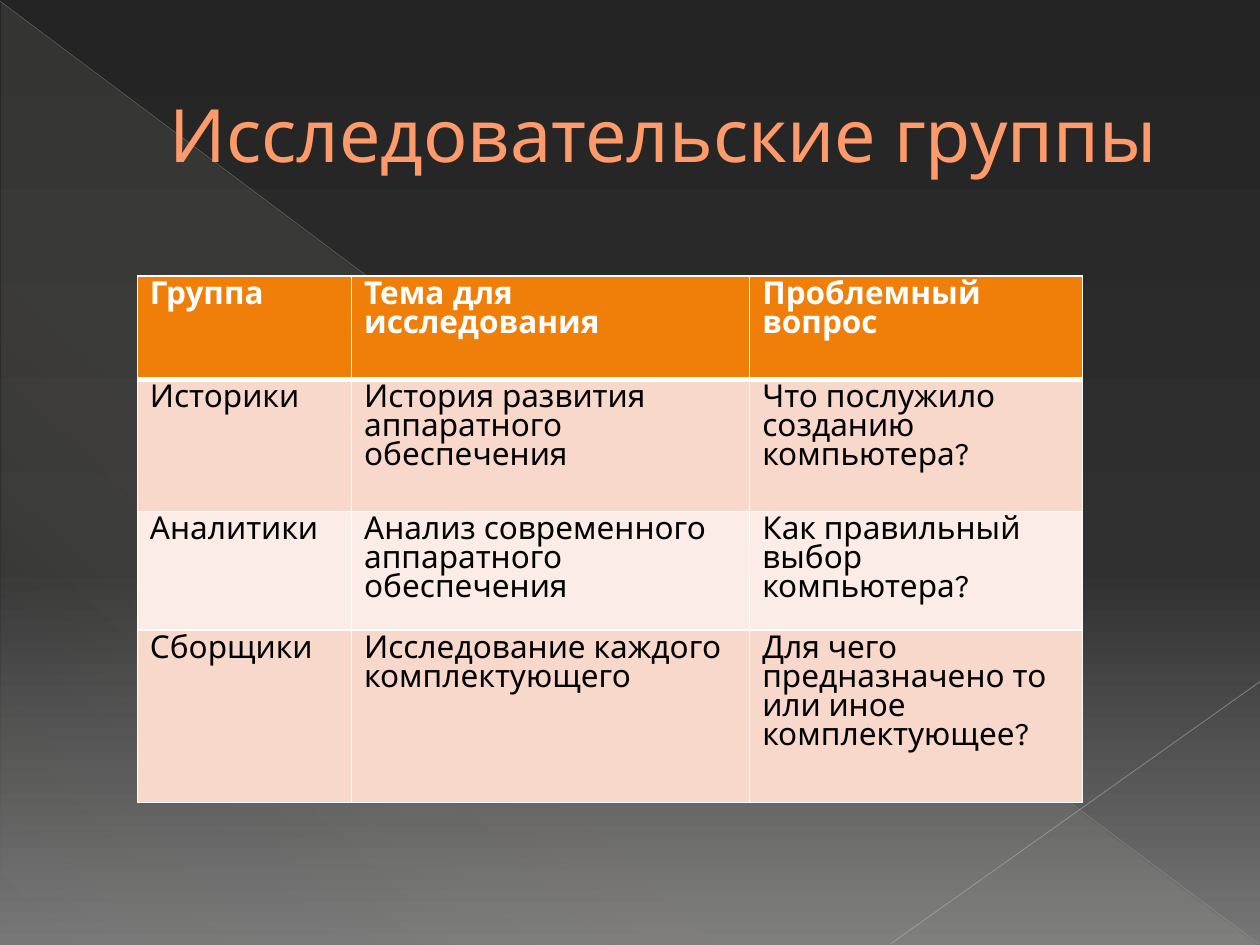
from dataclasses import dataclass

from lxml import etree
from pptx import Presentation
from pptx.dml.color import RGBColor
from pptx.enum.dml import MSO_LINE
from pptx.enum.shapes import MSO_CONNECTOR, MSO_SHAPE
from pptx.enum.text import MSO_ANCHOR, PP_ALIGN
from pptx.oxml import parse_xml
from pptx.oxml.ns import nsdecls, qn
from pptx.util import Emu, Pt

LINE = MSO_CONNECTOR.STRAIGHT
WEDGE = MSO_SHAPE.RIGHT_TRIANGLE
SOLID = MSO_LINE.SOLID
MIDDLE, TOP = MSO_ANCHOR.MIDDLE, MSO_ANCHOR.TOP
CENTER, LEFT = PP_ALIGN.CENTER, PP_ALIGN.LEFT
SCALE = 9144  # EMU per px, 100 px to the inch


@dataclass(frozen=True)
class Theme:
    font: str = "League Spartan"
    title: str = "FF9B6A"
    edge: str = "A65806"
    head: str = "F07F09"
    bands: tuple = ("F9D8CC", "FCECE7")
    light: str = "FFFFFF"
    dark: str = "000000"
    big: int = 42
    small: int = 18


@dataclass(frozen=True)
class Stop:
    pos: int
    color: str
    alpha: int = 100


@dataclass(frozen=True)
class Ray:
    start: tuple
    end: tuple
    color: str
    width: float
    alpha: int


THEME = Theme()
BACK = [Stop(0, "242424"), Stop(60, "303030"), Stop(100, "767676")]
SHEEN = [Stop(0, "E3DED1", 10), Stop(70, "E3DED1", 8), Stop(100, "E3DED1", 1)]
RAYS = [
    Ray((0, 1), (999, 749), "B6B6B6", 0.39, 35),
    Ray((1000, 541), (707, 749), "BFBFBF", 0.47, 45),
]
COLS = [170, 316, 264]
ROWS = [82, 105, 94, 137]
CELLS = [
    ["Группа", "Тема для исследования", "Проблемный вопрос"],
    ["Историки", "История развития аппаратного обеспечения",
     "Что послужило созданию компьютера?"],
    ["Аналитики", "Анализ современного аппаратного обеспечения",
     "Как правильный выбор компьютера?"],
    ["Сборщики", "Исследование каждого комплектующего",
     "Для чего предназначено то или иное комплектующее?"],
]


def px(n: int) -> Emu:
    return Emu(n * SCALE)


def grade(fill, stops: list, angle: int) -> None:
    """Give a fill any number of gradient stops."""
    fill.gradient()
    fill.gradient_angle = (360 - angle) % 360
    items = fill._fill._gradFill.find(qn("a:gsLst"))
    for old in list(items):
        items.remove(old)
    for stop in stops:
        items.append(parse_xml(
            f'<a:gs {nsdecls("a")} pos="{stop.pos * 1000}">'
            f'<a:srgbClr val="{stop.color}">'
            f'<a:alpha val="{stop.alpha * 1000}"/></a:srgbClr></a:gs>'))


def write(frame, text: str, *, size: int, color: str, bold: bool = False,
          align=LEFT, edge: str = ""):
    para = frame.paragraphs[0]
    para.alignment = align
    run = para.add_run()
    run.text = text
    font = run.font
    font.name, font.size, font.bold = THEME.font, Pt(size), bold
    font.color.rgb = RGBColor.from_string(color)
    if edge:
        font._element.insert(0, parse_xml(
            f'<a:ln {nsdecls("a")} w="{Pt(0.5)}"><a:solidFill>'
            f'<a:srgbClr val="{edge}"/></a:solidFill></a:ln>'))
    return para


def draw(slide, ray: Ray) -> None:
    ends = [px(n) for n in ray.start + ray.end]
    line = slide.shapes.add_connector(LINE, *ends)
    line.line.width = Pt(ray.width)
    line.line.dash_style = SOLID
    line.line.color.rgb = RGBColor.from_string(ray.color)
    props = line._element.spPr
    tint = props.find(".//" + qn("a:srgbClr"))
    etree.SubElement(tint, qn("a:alpha"), val=str(ray.alpha * 1000))
    etree.SubElement(props, qn("a:effectLst"))


def rule(cell, **widths: int) -> None:
    """Draw the cell's borders, with widths in points by side."""
    props = cell._tc.get_or_add_tcPr()
    for side in "LRTB":
        props.append(parse_xml(
            f'<a:ln{side} {nsdecls("a")} w="{Pt(widths.get(side, 1))}">'
            f'<a:solidFill><a:srgbClr val="{THEME.light}"/></a:solidFill>'
            f'</a:ln{side}>'))


def grid(slide, left: int, top: int) -> None:
    box = [px(n) for n in (left, top, sum(COLS), sum(ROWS))]
    table = slide.shapes.add_table(len(ROWS), len(COLS), *box).table
    for col, width in zip(table.columns, COLS):
        col.width = px(width)
    for i, (row, high, texts) in enumerate(zip(table.rows, ROWS, CELLS)):
        row.height = px(high)
        head = i == 0
        back = THEME.head if head else THEME.bands[(i - 1) % 2]
        for cell, text in zip(row.cells, texts):
            rule(cell, T=3 if i == 1 else 1, B=3 if head else 1)
            cell.fill.solid()
            cell.fill.fore_color.rgb = RGBColor.from_string(back)
            cell.vertical_anchor = TOP
            write(cell.text_frame, text, size=THEME.small, bold=head,
                  color=THEME.light if head else THEME.dark)


def main() -> None:
    deck = Presentation()
    deck.slide_width, deck.slide_height = px(1000), px(750)
    slide = deck.slides.add_slide(deck.slide_layouts[5])

    # Backdrop
    grade(slide.background.fill, BACK, 90)
    wedge = slide.shapes.add_shape(WEDGE, px(1), px(2), px(998), px(748))
    wedge.shadow.inherit = False
    wedge.line.fill.background()
    grade(wedge.fill, SHEEN, 133)
    for ray in RAYS:
        draw(slide, ray)

    # Title, in front of the backdrop
    title = slide.shapes.title
    title.left, title.top = px(50), px(29)
    title.width, title.height = px(900), px(153)
    frame = title.text_frame
    frame.word_wrap = True
    frame.vertical_anchor = MIDDLE
    para = write(frame, "Исследовательские группы", size=THEME.big,
                 color=THEME.title, align=CENTER, edge=THEME.edge)
    para._p.get_or_add_pPr().set("marL", str(px(53)))
    slide.shapes._spTree.append(title._element)

    # Table of groups
    grid(slide, 109, 219)
    deck.save("out.pptx")


if __name__ == "__main__":
    main()
